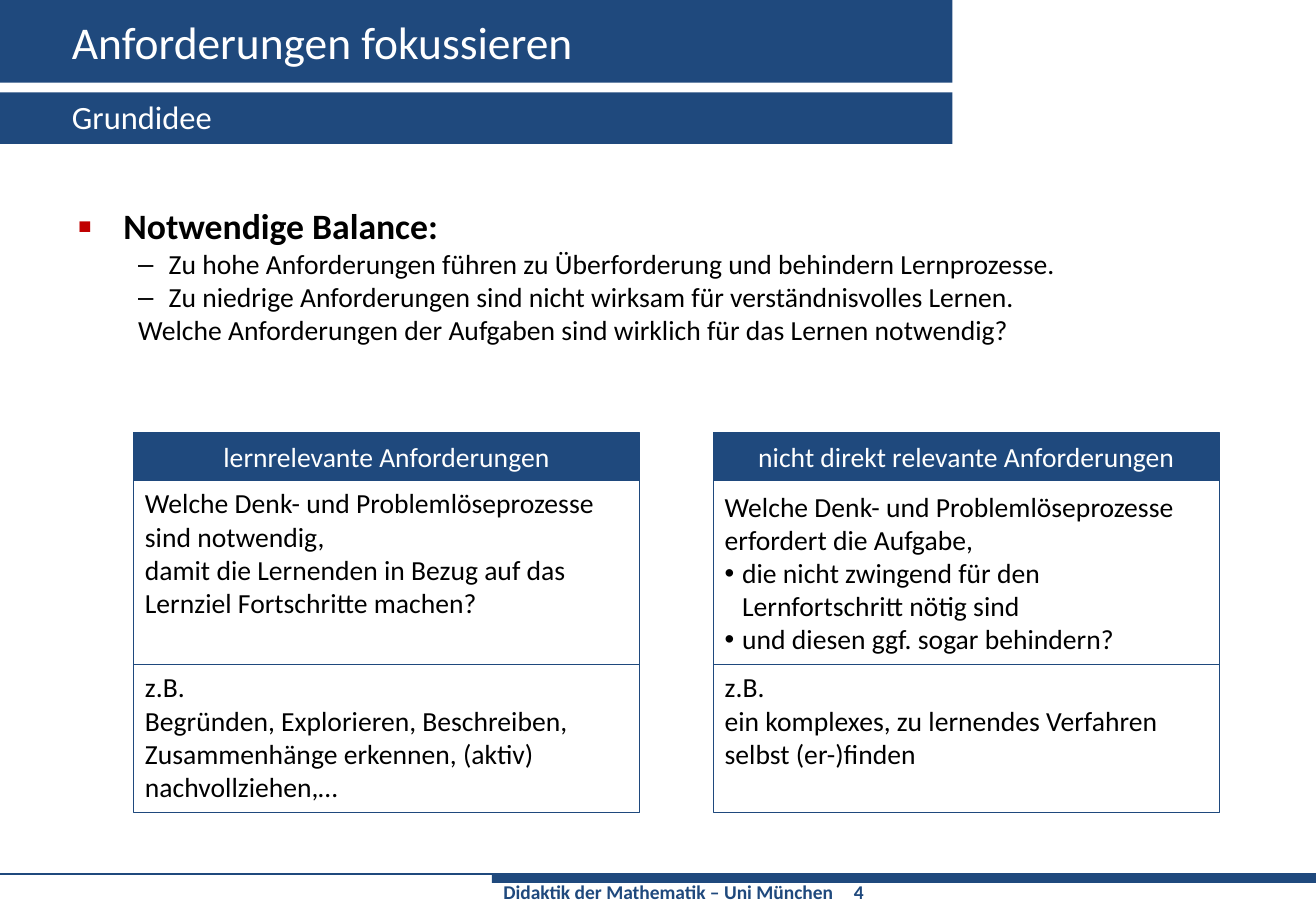
from dataclasses import dataclass

from lxml.etree import SubElement
from pptx import Presentation
from pptx.dml.color import RGBColor
from pptx.enum.shapes import MSO_CONNECTOR, MSO_SHAPE
from pptx.enum.text import MSO_ANCHOR as Anchor, MSO_AUTO_SIZE, PP_ALIGN as Align
from pptx.oxml.ns import qn
from pptx.util import Cm, Pt


@dataclass(frozen=True)
class Theme:
    font: str = "Calibri"
    blue: str = "1F497D"
    red: str = "C00000"
    black: str = "000000"
    white: str = "FFFFFF"
    title: int = 28
    subtitle: int = 20
    heading: int = 22
    text: int = 17
    footer: int = 12


@dataclass(frozen=True)
class Style:
    """Paragraph look; indents and right tab stop in cm, bullet size in percent."""
    size: int
    color: str = Theme.black
    bold: bool = False
    align: Align = Align.LEFT
    level: int = 0
    left: float = 0
    hanging: float = 0
    bullet: str = ""
    bullet_color: str = ""
    bullet_size: int = 100
    right_tab: float = 0


THEME = Theme()
TITLE = Style(THEME.title, THEME.white)
SUBTITLE = Style(THEME.subtitle, THEME.white)
HEADING = Style(THEME.heading, bold=True, left=1, hanging=1,
                bullet="▪", bullet_color=THEME.red, bullet_size=120)
DASH = Style(THEME.text, level=1, left=1.98, hanging=0.66, bullet="–")
QUESTION = Style(THEME.text, level=1, left=1.32)
CARD_HEAD = Style(THEME.text, THEME.white, align=Align.CENTER)
CARD_TEXT = Style(THEME.text)
CARD_BULLET = Style(THEME.text, left=0.38, hanging=0.38, bullet="•")
FOOTER = Style(THEME.footer, THEME.blue, bold=True, right_tab=16.13)

# Content: paragraphs are (text, style); \v is a line break
TITLE_TEXT = [("Anforderungen fokussieren", TITLE)]
SUBTITLE_TEXT = [("Grundidee", SUBTITLE)]
BALANCE = [
    ("Notwendige Balance:", HEADING),
    ("Zu hohe Anforderungen führen zu Überforderung und behindern Lernprozesse.", DASH),
    ("Zu niedrige Anforderungen sind nicht wirksam für verständnisvolles Lernen.", DASH),
    ("Welche Anforderungen der Aufgaben sind wirklich für das Lernen notwendig?", QUESTION),
]
# Each card: (paragraphs, anchor) for head, question and example
CARDS = [
    [
        ([("lernrelevante Anforderungen", CARD_HEAD)], Anchor.MIDDLE),
        ([("Welche Denk- und Problemlöseprozesse sind notwendig,\v"
           "damit die Lernenden in Bezug auf das Lernziel Fortschritte machen?",
           CARD_TEXT)], Anchor.TOP),
        ([("z.B.\vBegründen, Explorieren, Beschreiben, Zusammenhänge erkennen, "
           "(aktiv) nachvollziehen,…", CARD_TEXT)], Anchor.TOP),
    ],
    [
        ([("nicht direkt relevante Anforderungen", CARD_HEAD)], Anchor.MIDDLE),
        ([("Welche Denk- und Problemlöseprozesse erfordert die Aufgabe,", CARD_TEXT),
          ("die nicht zwingend für den Lernfortschritt nötig sind", CARD_BULLET),
          ("und diesen ggf. sogar behindern?", CARD_BULLET)], Anchor.MIDDLE),
        ([("z.B.\vein komplexes, zu lernendes Verfahren selbst (er-)finden",
           CARD_TEXT)], Anchor.TOP),
    ],
]
FOOTER_TEXT = [("Didaktik der Mathematik – Uni München\t4", FOOTER)]

# Geometry in cm, the slide size in points
SLIDE_WIDTH, SLIDE_HEIGHT = Pt(810.75), Pt(567)
FOOTER_LEFT, FOOTER_TOP, FOOTER_WIDTH = 10.69, 19, 17.91
BARS = [(0, 0, 20.7, 1.8), (0, 2.01, 20.7, 1.12),
        (FOOTER_LEFT, FOOTER_TOP, FOOTER_WIDTH, 0.2)]
BODY_TOP_MARGIN = 0.83
CARD_LEFT, CARD_TOP, CARD_WIDTH, CARD_STEP = 2.9, 9.4, 11, 12.6
CARD_HEIGHTS = [1.05, 4, 3.21]


def rgb(color):
    return RGBColor.from_string(color)


def box(left, top, width, height):
    return Cm(left), Cm(top), Cm(width), Cm(height)


def set_indent(paragraph, style):
    """Set indent, bullet and tab stop."""
    properties = paragraph._p.get_or_add_pPr()
    properties.set("marL", str(Cm(style.left)))
    properties.set("indent", str(-Cm(style.hanging)))
    if style.bullet:
        if style.bullet_color:
            color = SubElement(properties, qn("a:buClr"))
            SubElement(color, qn("a:srgbClr"), val=style.bullet_color)
        SubElement(properties, qn("a:buSzPct"), val=str(style.bullet_size * 1000))
        SubElement(properties, qn("a:buFont"), typeface="Arial")
        SubElement(properties, qn("a:buChar"), char=style.bullet)
    else:
        SubElement(properties, qn("a:buNone"))
    if style.right_tab:
        tabs = SubElement(properties, qn("a:tabLst"))
        SubElement(tabs, qn("a:tab"), pos=str(Cm(style.right_tab)), algn="r")


def write(shape, paragraphs, anchor=Anchor.TOP):
    frame = shape.text_frame
    frame.word_wrap = True
    frame.auto_size = MSO_AUTO_SIZE.NONE
    frame.vertical_anchor = anchor
    frame.text = "\n".join(text for text, _ in paragraphs)
    for paragraph, (_, style) in zip(frame.paragraphs, paragraphs):
        paragraph.level = style.level
        paragraph.alignment = style.align
        paragraph.space_before = Pt(0)
        set_indent(paragraph, style)
        for run in paragraph.runs:
            run.font.name = THEME.font
            run.font.size = Pt(style.size)
            run.font.bold = style.bold
            run.font.color.rgb = rgb(style.color)


def add_rectangle(slide, area, filled, outlined):
    shape = slide.shapes.add_shape(MSO_SHAPE.RECTANGLE, *box(*area))
    shape.shadow.inherit = False
    if filled:
        shape.fill.solid()
        shape.fill.fore_color.rgb = rgb(THEME.blue)
    else:
        shape.fill.background()
    if outlined:
        shape.line.color.rgb = rgb(THEME.blue)
        shape.line.width = Pt(0.5)
    else:
        shape.line.fill.background()
    return shape


def add_frame(slide):
    """Blue bars behind the placeholders, and the footer."""
    for area in BARS:
        bar = add_rectangle(slide, area, filled=True, outlined=False)
        slide.shapes._spTree.insert(2, bar._element)
    rule = slide.shapes.add_connector(MSO_CONNECTOR.STRAIGHT, 0, Cm(FOOTER_TOP),
                                      SLIDE_WIDTH, Cm(FOOTER_TOP))
    rule.line.color.rgb = rgb(THEME.blue)
    rule.line.width = Pt(1)
    SubElement(rule._element.spPr, qn("a:effectLst"))
    footer_area = box(FOOTER_LEFT, FOOTER_TOP + 0.02, FOOTER_WIDTH, 0.78)
    write(slide.shapes.add_textbox(*footer_area), FOOTER_TEXT)


def fill_placeholders(slide):
    title, subtitle, body = slide.placeholders
    for shape, area, paragraphs, anchor in [
        (title, (1.31, 0, 19.2, 1.8), TITLE_TEXT, Anchor.MIDDLE),
        (subtitle, (1.31, 1.99, 19.2, 1.12), SUBTITLE_TEXT, Anchor.TOP),
        (body, (1.43, 3.61, 25.76, 14.27), BALANCE, Anchor.TOP),
    ]:
        shape.left, shape.top, shape.width, shape.height = box(*area)
        write(shape, paragraphs, anchor)
    body.text_frame.margin_top = Cm(BODY_TOP_MARGIN)


def add_cards(slide):
    for column, card in enumerate(CARDS):
        top = CARD_TOP
        for row, (height, (paragraphs, anchor)) in enumerate(zip(CARD_HEIGHTS, card)):
            area = (CARD_LEFT + column * CARD_STEP, top, CARD_WIDTH, height)
            shape = add_rectangle(slide, area, filled=row == 0, outlined=True)
            write(shape, paragraphs, anchor)
            top += height


def main():
    presentation = Presentation()
    presentation.slide_width, presentation.slide_height = SLIDE_WIDTH, SLIDE_HEIGHT
    two_content = presentation.slide_layouts[3]
    slide = presentation.slides.add_slide(two_content)
    fill_placeholders(slide)
    add_frame(slide)
    add_cards(slide)
    presentation.save("out.pptx")


if __name__ == "__main__":
    main()
